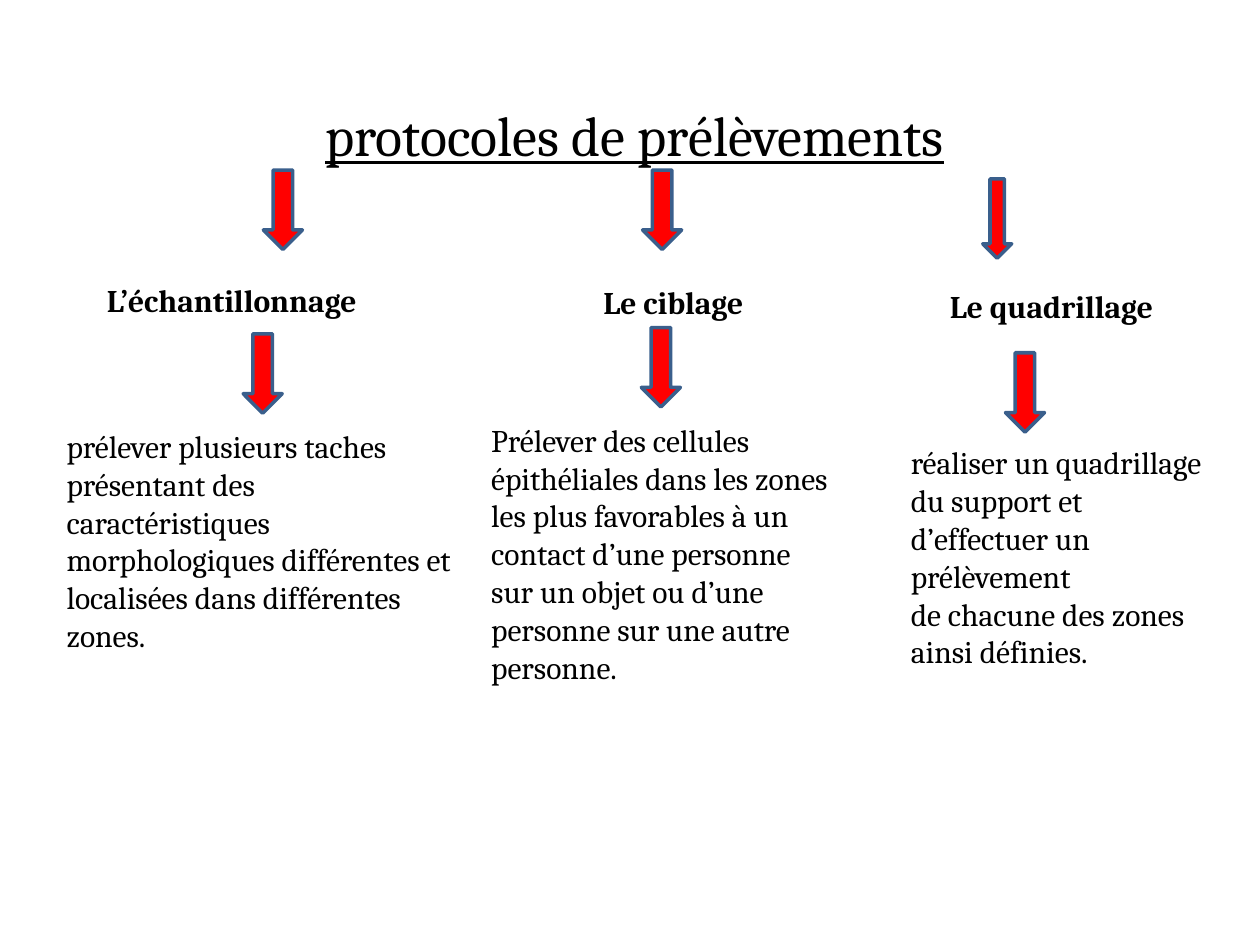
import pptx
import pptx.util
import pptx.dml.color
import pptx.enum.shapes
import pptx.enum.text

Inches = pptx.util.Inches
Pt = pptx.util.Pt

BLACK = pptx.dml.color.RGBColor(0x00, 0x00, 0x00)
RED = pptx.dml.color.RGBColor(0xFF, 0x00, 0x00)
BLUE = pptx.dml.color.RGBColor(0x3A, 0x5F, 0x8C)
FONT = "Cambria"
ARROW_HEIGHT = 0.63

PROTOCOLS = [
    {
        "box": (0.43, 1.35, 3.31, 3.61),
        "heading": "L’échantillonnage",
        "heading_box": (0.32, 0.83, 2.44, 0.4),
        "arrows": [(1.66, 0, 0.31), (1.5, 1.3, 0.31)],
        "body_top": 1.99,
        "body": [
            "prélever plusieurs taches présentant des caractéristiques",
            "morphologiques différentes et localisées dans différentes zones.",
        ],
    },
    {
        "box": (3.8, 1.35, 2.91, 4.16),
        "heading": "Le ciblage",
        "heading_box": (0.89, 0.85, 1.65, 0.4),
        "arrows": [(1.3, 0, 0.31), (1.29, 1.25, 0.31)],
        "body_top": 1.94,
        "body": [
            "Prélever des cellules épithéliales dans les zones les plus "
            "favorables à un contact d’une personne sur un objet ou d’une "
            "personne sur une autre personne.",
        ],
    },
    {
        "box": (7.13, 1.42, 2.68, 3.67),
        "heading": "Le quadrillage",
        "heading_box": (0.31, 0.81, 1.86, 0.4),
        "arrows": [(0.67, 0, 0.23), (0.85, 1.38, 0.31)],
        "body_top": 2.05,
        "body": [
            "réaliser un quadrillage du support et d’effectuer un prélèvement",
            "de chacune des zones ainsi définies.",
        ],
    },
]


def write_text(tf, paragraphs, size, bold=False, underline=False):
    tf.word_wrap = True
    tf.auto_size = pptx.enum.text.MSO_AUTO_SIZE.NONE
    tf.vertical_anchor = pptx.enum.text.MSO_ANCHOR.TOP
    for i, text in enumerate(paragraphs):
        p = tf.paragraphs[0] if i == 0 else tf.add_paragraph()
        p.alignment = pptx.enum.text.PP_ALIGN.LEFT
        r = p.add_run()
        r.text = text
        r.font.name = FONT
        r.font.size = Pt(size)
        r.font.bold = bold
        r.font.underline = underline
        r.font.color.rgb = BLACK


def add_text(s, left, top, width, height, paragraphs, bold=False):
    sp = s.shapes.add_textbox(
        Inches(left), Inches(top), Inches(width), Inches(height))
    write_text(sp.text_frame, paragraphs, 18, bold)


def add_arrow(s, left, top, width):
    sp = s.shapes.add_shape(
        pptx.enum.shapes.MSO_SHAPE.DOWN_ARROW,
        Inches(left), Inches(top), Inches(width), Inches(ARROW_HEIGHT))
    sp.shadow.inherit = False
    sp.fill.solid()
    sp.fill.fore_color.rgb = RED
    sp.line.color.rgb = BLUE
    sp.line.width = Pt(2)


def place_title(s, left, top, width, height):
    sp = s.shapes.title
    sp.left, sp.top = Inches(left), Inches(top)
    sp.width, sp.height = Inches(width), Inches(height)
    write_text(sp.text_frame, ["protocoles de prélèvements"], 32, underline=True)


def add_protocol(s, protocol):
    left, top, width, height = protocol["box"]
    dx, dy, heading_width, heading_height = protocol["heading_box"]
    add_text(s, left + dx, top + dy, heading_width, heading_height,
             [protocol["heading"]], bold=True)
    body_top = protocol["body_top"]
    add_text(s, left, top + body_top, width, height - body_top, protocol["body"])
    for dx, dy, arrow_width in protocol["arrows"]:
        add_arrow(s, left + dx, top + dy, arrow_width)


def main():
    prs = pptx.Presentation()
    prs.slide_width, prs.slide_height = Inches(10), Inches(7.5)
    s = prs.slides.add_slide(prs.slide_layouts[5])
    place_title(s, 2.48, 0.75, 5.43, 0.64)
    for protocol in PROTOCOLS:
        add_protocol(s, protocol)
    prs.save("out.pptx")


if __name__ == "__main__":
    main()
